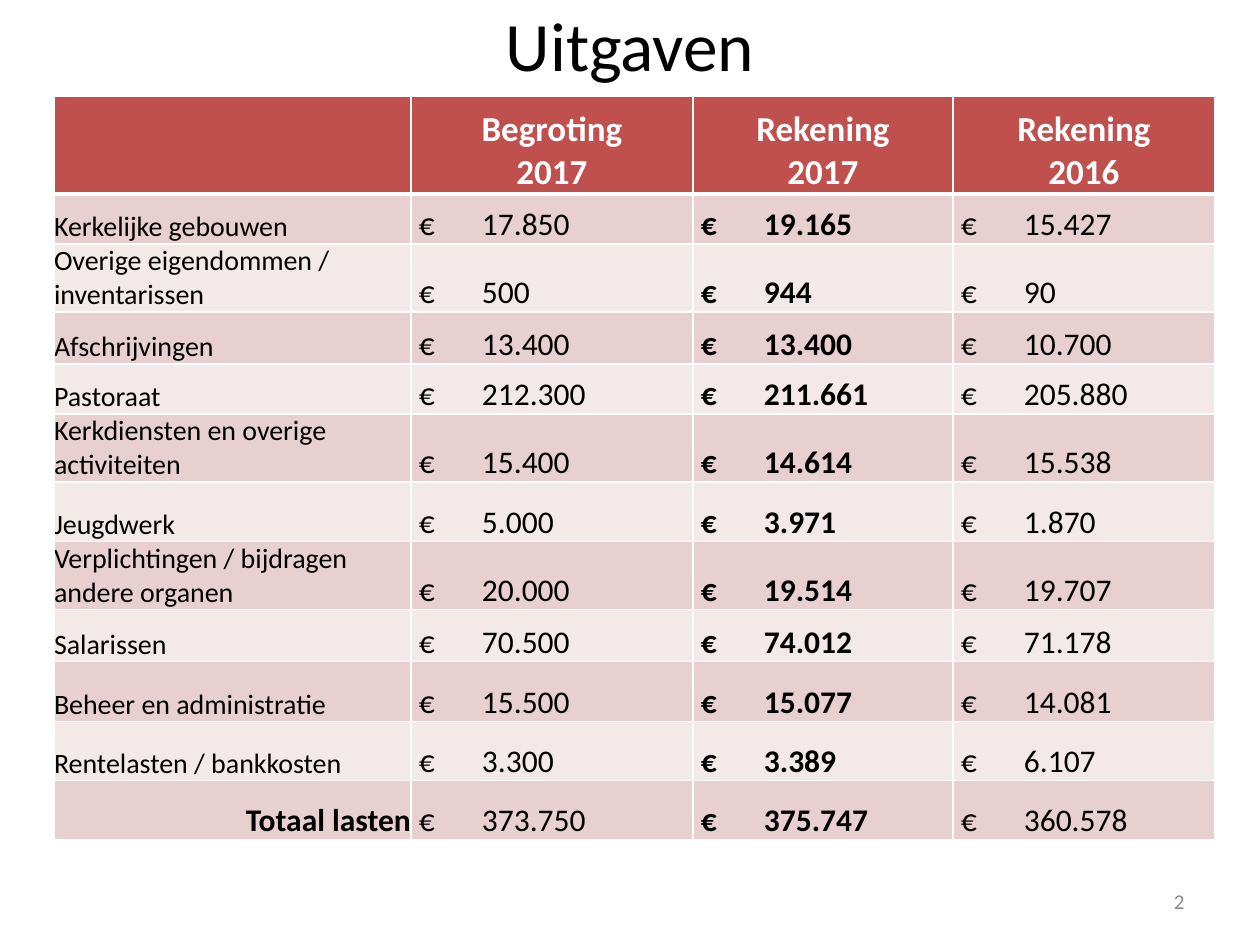
from lxml.etree import SubElement
from pptx import Presentation
from pptx.dml.color import RGBColor
from pptx.enum.text import MSO_ANCHOR, PP_ALIGN
from pptx.oxml.ns import qn
from pptx.util import Pt

SCALE = 914400 / 126
HUES = {"white": "FFFFFF", "black": "000000", "gray": "8C8C8C",
        "red": "C0504D", "rose": "E8D0D0", "pale": "F4E9E9"}
FORMS = {
    "title": {"size": Pt(39.6), "bold": False},
    "page": {"size": Pt(12), "bold": False},
    "head": {"size": Pt(20), "bold": True},
    "label": {"size": Pt(16), "bold": False},
    "sum": {"size": Pt(18), "bold": False},
    "strong": {"size": Pt(18), "bold": True},
}
INSETS = {"margin_left": 0, "margin_right": 0, "margin_top": 0,
          "margin_bottom": 0, "vertical_anchor": MSO_ANCHOR.BOTTOM}
WIDTHS = [357, 282, 260, 262]
HEIGHTS = [98, 50, 68, 52, 50, 68, 60, 68, 52, 60, 59, 59]
PAD = 8
STOP = 203
HEADS = ["", "Begroting\n2017", "Rekening\n2017", "Rekening\n2016"]
COSTS = [
    ("Kerkelijke gebouwen", "17.850", "19.165", "15.427"),
    ("Overige eigendommen / inventarissen", "500", "944", "90"),
    ("Afschrijvingen", "13.400", "13.400", "10.700"),
    ("Pastoraat", "212.300", "211.661", "205.880"),
    ("Kerkdiensten en overige activiteiten", "15.400", "14.614", "15.538"),
    ("Jeugdwerk", "5.000", "3.971", "1.870"),
    ("Verplichtingen / bijdragen andere organen", "20.000", "19.514", "19.707"),
    ("Salarissen", "70.500", "74.012", "71.178"),
    ("Beheer en administratie", "15.500", "15.077", "14.081"),
    ("Rentelasten / bankkosten", "3.300", "3.389", "6.107"),
    ("Totaal lasten", "373.750", "375.747", "360.578"),
]


def px(num):
    return round(num * SCALE)


def apply(item, vals):
    for key, val in vals.items():
        setattr(item, key, val)


def write(frame, text, form, hue, align):
    frame.text = text
    for para in frame.paragraphs:
        para.alignment = align
        for run in para.runs:
            apply(run.font, {"name": "Calibri", **FORMS[form]})
            run.font.color.rgb = RGBColor.from_string(HUES[hue])


def add_text(slide, box, text, form, hue, align):
    frame = slide.shapes.add_textbox(*map(px, box)).text_frame
    apply(frame, {"word_wrap": True, "vertical_anchor": MSO_ANCHOR.MIDDLE})
    write(frame, text, form, hue, align)


def add_tab(para):
    tabs = SubElement(para._p.get_or_add_pPr(), qn("a:tabLst"))
    SubElement(tabs, qn("a:tab"), pos=str(px(STOP)), algn="r")


def add_lines(cell, row):
    props = cell._tc.get_or_add_tcPr()
    wide = {0: "lnB", 1: "lnT"}.get(row)
    for side in ("lnL", "lnR", "lnT", "lnB"):
        size = Pt(3) if side == wide else Pt(1)
        line = SubElement(props, qn(f"a:{side}"), w=str(size))
        fill = SubElement(line, qn("a:solidFill"))
        SubElement(fill, qn("a:srgbClr"), val=HUES["white"])


def fill_cell(cell, row, col, text):
    apply(cell, INSETS)
    add_lines(cell, row)
    back = "red" if row == 0 else "rose" if row % 2 else "pale"
    cell.fill.solid()
    cell.fill.fore_color.rgb = RGBColor.from_string(HUES[back])
    frame = cell.text_frame
    if row == 0:
        write(frame, text, "head", "white", PP_ALIGN.CENTER)
    elif col:
        cell.margin_left = px(PAD)
        add_tab(frame.paragraphs[0])
        form = "strong" if col == 2 else "sum"
        write(frame, f"€\t{text}", form, "black", PP_ALIGN.JUSTIFY)
    elif row == len(COSTS):
        write(frame, text, "strong", "black", PP_ALIGN.RIGHT)
    else:
        write(frame, text, "label", "black", PP_ALIGN.LEFT)


def add_costs(slide, left, top):
    rows = [HEADS, *COSTS]
    box = (left, top, sum(WIDTHS), sum(HEIGHTS))
    table = slide.shapes.add_table(len(rows), len(WIDTHS), *map(px, box)).table
    for col, width in zip(table.columns, WIDTHS):
        col.width = px(width)
    for row, height in zip(table.rows, HEIGHTS):
        row.height = px(height)
    for r, row in enumerate(rows):
        for c, text in enumerate(row):
            fill_cell(table.cell(r, c), r, c, text)


def main():
    deck = Presentation()
    apply(deck, {"slide_width": px(1260), "slide_height": px(945)})
    slide = deck.slides.add_slide(deck.slide_layouts[6])
    add_text(slide, (63, 0, 1134, 88), "Uitgaven", "title", "black", PP_ALIGN.CENTER)
    add_costs(slide, 54, 96)
    add_text(slide, (903, 876, 294, 50), "2", "page", "gray", PP_ALIGN.RIGHT)
    deck.save("out.pptx")


if __name__ == "__main__":
    main()
